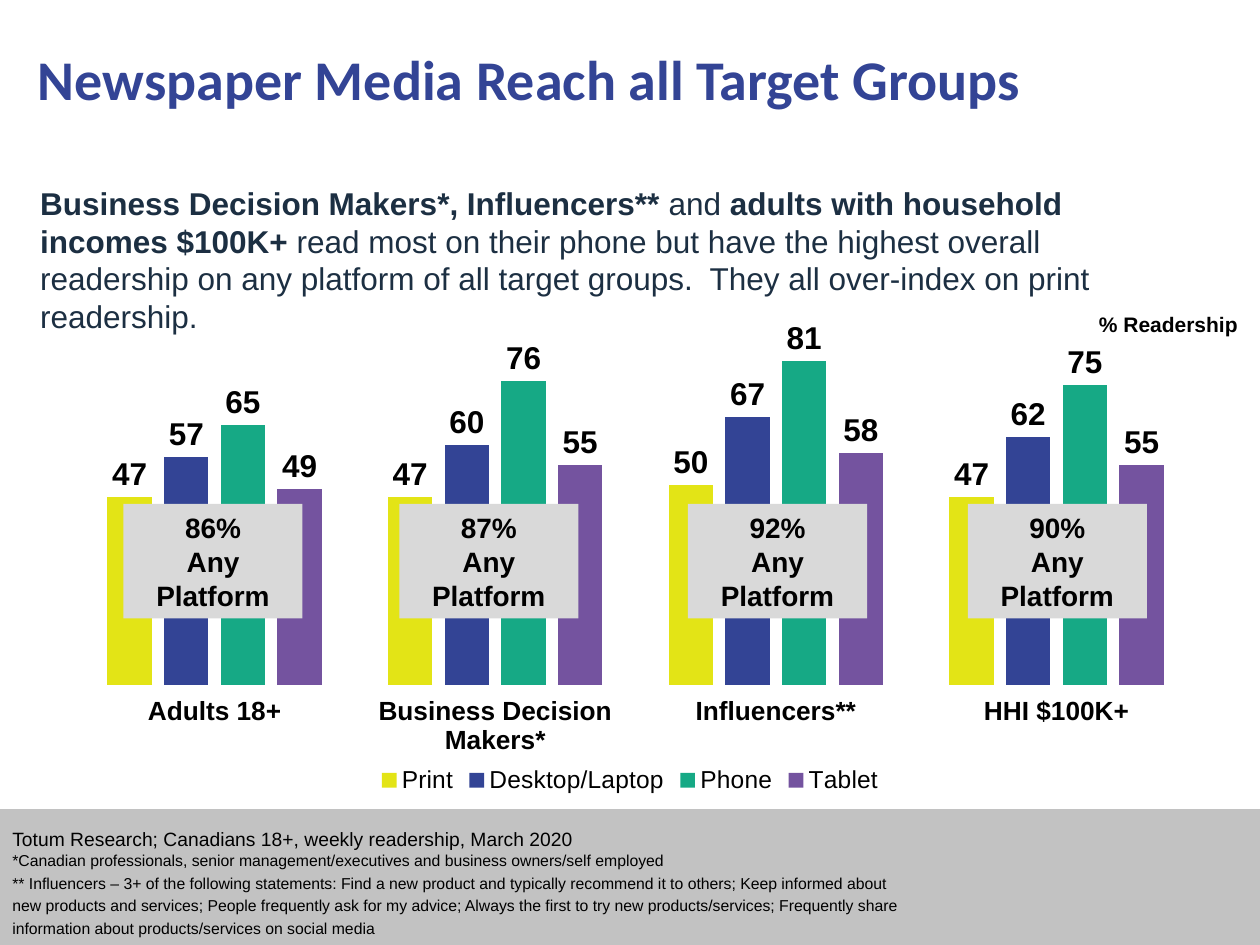
from dataclasses import dataclass

from lxml import etree
from pptx import Presentation
from pptx import util as u
from pptx.chart.data import CategoryChartData
from pptx.dml.color import RGBColor
from pptx.enum import chart as ch
from pptx.enum import shapes, text

COLORS = {
    "navy": "334495", "ink": "1C2F42", "black": "000000",
    "footer": "C2C2C2", "badge": "D9D9D9",
    "Print": "E3E416", "Desktop/Laptop": "334495",
    "Phone": "16A985", "Tablet": "74539F",
}
READERSHIP = {
    "Print": (47, 47, 50, 47),
    "Desktop/Laptop": (57, 60, 67, 62),
    "Phone": (65, 76, 81, 75),
    "Tablet": (49, 55, 58, 55),
}
GROUPS = ("Adults 18+", "Business Decision Makers*", "Influencers**", "HHI $100K+")
ANY_PLATFORM = ((1.22, "86%"), (6.78, "87%"), (12.6, "92%"), (18.24, "90%"))


@dataclass
class Box:
    """A region of the slide in centimetres."""
    left: float
    top: float
    width: float
    height: float

    def inner(self, left, top, width, height):
        """Return a box placed relative to this one."""
        return Box(self.left + left, self.top + top, width, height)

    def emu(self):
        """Return the four lengths for python-pptx."""
        return [u.Cm(v) for v in (self.left, self.top, self.width, self.height)]


def rgb(name):
    """Look up a named colour."""
    return RGBColor.from_string(COLORS[name])


def style_font(font, size, color="black", bold=False, face="Arial"):
    """Set the face, size, weight and colour of a font."""
    font.name, font.size, font.bold = face, u.Pt(size), bold
    font.color.rgb = rgb(color)


def write(frame, content, size=18, color="black", bold=False, face="Arial",
          align=text.PP_ALIGN.LEFT, spacing=None, anchor=text.MSO_ANCHOR.TOP, more=False):
    """Write one paragraph, given as a string or as (string, bold) runs."""
    frame.word_wrap = True
    frame.auto_size = text.MSO_AUTO_SIZE.NONE
    frame.vertical_anchor = anchor
    paragraph = frame.add_paragraph() if more else frame.paragraphs[0]
    paragraph.alignment = align
    if spacing:
        paragraph.line_spacing = spacing
    for words, heavy in [(content, bold)] if isinstance(content, str) else content:
        run = paragraph.add_run()
        run.text = words
        style_font(run.font, size, color, heavy, face)


def add_panel(slide, box, color):
    """Add a plain filled rectangle."""
    panel = slide.shapes.add_shape(shapes.MSO_SHAPE.RECTANGLE, *box.emu())
    panel.shadow.inherit = False
    panel.fill.solid()
    panel.fill.fore_color.rgb = rgb(color)
    panel.line.fill.background()
    return panel


def add_heading(slide, box):
    """Place the slide title."""
    title = slide.shapes.title
    title.left, title.top, title.width, title.height = box.emu()
    write(title.text_frame, "Newspaper Media Reach all Target Groups", size=32,
          color="navy", bold=True, face="Calibri", spacing=0.8)


def add_summary(slide, box):
    """Place the key message."""
    summary = slide.shapes.add_textbox(*box.emu())
    write(summary.text_frame, [
        ("Business Decision Makers*, Influencers** ", True),
        ("and", False),
        (" adults with household incomes $100K+ ", True),
        ("read most on their phone but have the highest overall readership on any "
         "platform of all target groups.  They all over-index on print readership.", False),
    ], color="ink")


def set_plot_area(chart, **fractions):
    """Fix the inner plot area as fractions of the chart."""
    plot_area = chart.plots[0]._element.getparent()
    ns = etree.QName(plot_area).namespace
    for old in plot_area.findall(f"{{{ns}}}layout"):
        plot_area.remove(old)
    layout = etree.Element(f"{{{ns}}}layout")
    manual = etree.SubElement(layout, f"{{{ns}}}manualLayout")
    settings = {"layoutTarget": "inner", "xMode": "edge", "yMode": "edge", **fractions}
    for tag, value in settings.items():
        etree.SubElement(manual, f"{{{ns}}}{tag}").set("val", str(value))
    plot_area.insert(0, layout)


def add_readership(slide, box):
    """Place the column chart with its unit label and any-platform badges."""
    data = CategoryChartData()
    data.categories = GROUPS
    for platform, values in READERSHIP.items():
        data.add_series(platform, values)
    chart = slide.shapes.add_chart(
        ch.XL_CHART_TYPE.COLUMN_CLUSTERED, *box.emu(), data).chart
    style_font(chart.font, 18, face="League Spartan")
    chart.has_title = False
    chart.has_legend = True
    chart.legend.position = ch.XL_LEGEND_POSITION.BOTTOM
    chart.legend.include_in_layout = False
    style_font(chart.legend.font, 14)

    groups_axis, percent_axis = chart.category_axis, chart.value_axis
    style_font(groups_axis.tick_labels.font, 15, bold=True)
    groups_axis.format.line.fill.background()
    percent_axis.minimum_scale, percent_axis.maximum_scale = 0, 90
    percent_axis.has_major_gridlines = False
    percent_axis.visible = False

    columns = chart.plots[0]
    columns.gap_width, columns.overlap, columns.vary_by_categories = 150, -28, False
    for platform in columns.series:
        platform.format.fill.solid()
        platform.format.fill.fore_color.rgb = rgb(platform.name)
        platform.invert_if_negative = False
        labels = platform.data_labels
        labels.show_value = True
        labels.position = ch.XL_LABEL_POSITION.OUTSIDE_END
        style_font(labels.font, 18, bold=True)
    set_plot_area(chart, x=0.01, y=0.169, w=0.99, h=0.631)

    for left, share in ANY_PLATFORM:
        badge = add_panel(slide, box.inner(left, 5.56, 3.61, 2.31), "badge")
        for line in (share, "Any Platform"):
            write(badge.text_frame, line, size=16, bold=True, more=line != share,
                  align=text.PP_ALIGN.CENTER, anchor=text.MSO_ANCHOR.MIDDLE)

    unit = slide.shapes.add_textbox(*box.inner(20.57, 1.55, 3.43, 0.76).emu())
    write(unit.text_frame, "% Readership", size=12, bold=True, align=text.PP_ALIGN.CENTER)


def add_footer(slide, box):
    """Place the footer band with the source and footnotes."""
    add_panel(slide, box, "footer")
    notes = slide.shapes.add_textbox(*box.inner(0, 0.25, 18.39, 2.49).emu()).text_frame
    write(notes, "Totum Research; Canadians 18+, weekly readership, March 2020", size=11)
    write(notes, "*Canadian professionals, senior management/executives and business "
          "owners/self employed", size=9, more=True)
    write(notes, "** Influencers – 3+ of the following statements: Find a new product and "
          "typically recommend it to others; Keep informed about new products and services; "
          "People frequently ask for my advice; Always the first to try new "
          "products/services; Frequently share information about products/services on "
          "social media", size=9, spacing=1.2, more=True)


def main():
    """Build and save the slide."""
    deck = Presentation()
    deck.slide_width, deck.slide_height = u.Cm(25.4), u.Cm(19.05)
    slide = deck.slides.add_slide(deck.slide_layouts.get_by_name("Title Only"))
    add_heading(slide, Box(0.51, 1.04, 20.8, 2.49))
    add_summary(slide, Box(0.56, 3.58, 23.7, 3.33))
    add_readership(slide, Box(1.27, 4.6, 22.86, 11.51))
    add_footer(slide, Box(0, 16.31, 25.4, 2.74))
    deck.save("out.pptx")


if __name__ == "__main__":
    main()
